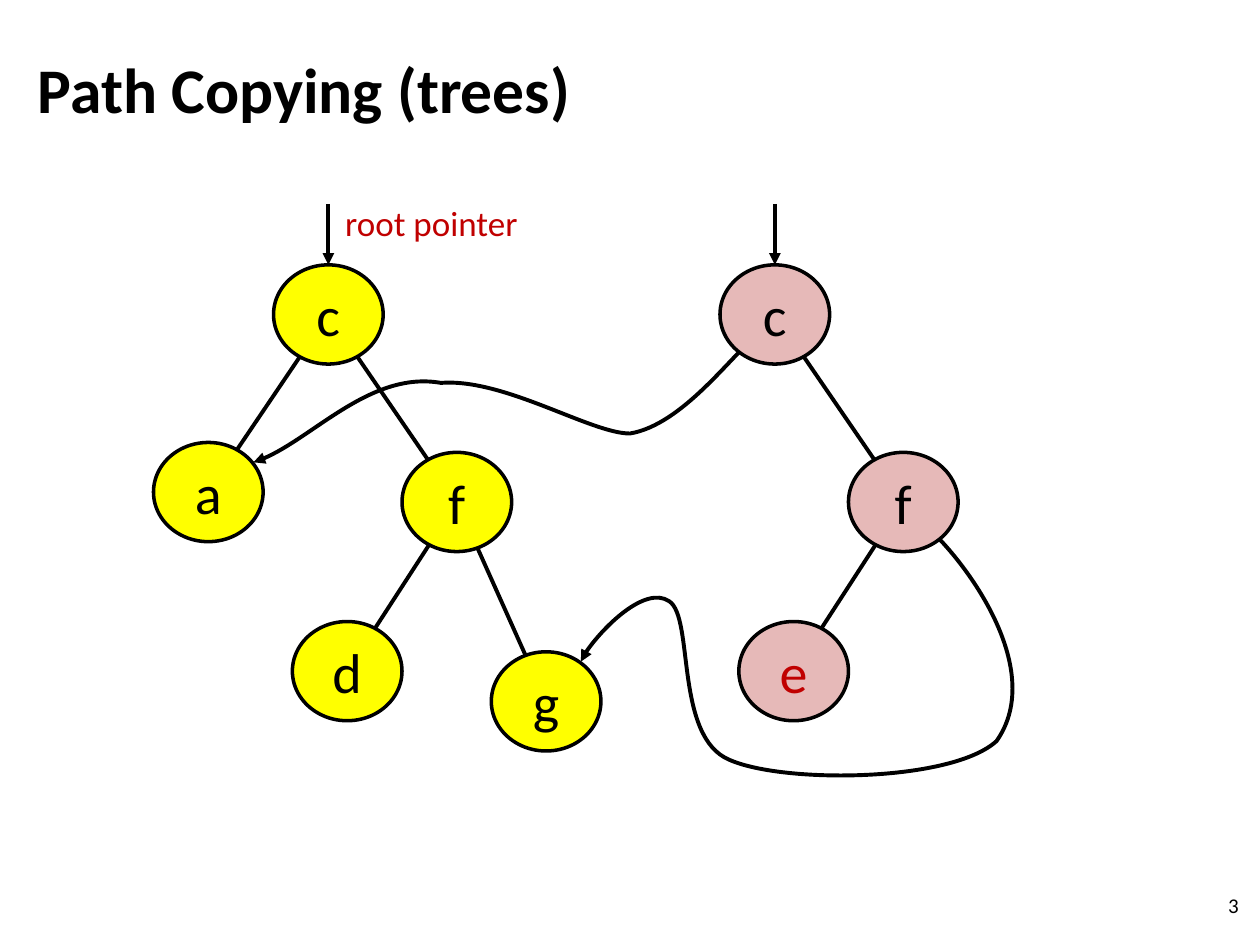
from dataclasses import dataclass
from lxml.etree import SubElement as Sub
from pptx import Presentation as Deck
from pptx.dml.color import RGBColor as Rgb
from pptx.enum.shapes import MSO_CONNECTOR as Link, MSO_SHAPE as Form
from pptx.enum.text import MSO_ANCHOR as Anchor, PP_ALIGN as Align
from pptx.oxml.ns import qn
from pptx.util import Cm, Pt

Point = tuple[float, float]


@dataclass(frozen=True)
class Theme:
    font: str = "Calibri"
    ink: Rgb = Rgb(0, 0, 0)
    red: Rgb = Rgb(0xC0, 0, 0)
    old: Rgb = Rgb(0xFF, 0xFF, 0)
    new: Rgb = Rgb(0xE6, 0xB9, 0xB8)
    title: float = 36.3
    node: float = 32
    label: float = 20
    page: float = 12
    edge: float = 2.25
    rim: float = 2


@dataclass(frozen=True)
class Node:
    name: str
    x: float
    y: float
    fill: Rgb
    ink: Rgb


@dataclass(frozen=True)
class Edge:
    top: Node
    low: Node
    cut: float = 0


@dataclass(frozen=True)
class Label:
    text: str
    x: float
    y: float
    wide: float
    high: float
    size: float
    ink: Rgb
    bold: bool = False
    align: Align = Align.LEFT
    anchor: Anchor = Anchor.MIDDLE
    space: float = 1


LOOK = Theme()
WIDE, HIGH = 2.21, 2.0
SHIFT = 9.0
ROOT_Y, F_Y, LEAF_Y = 6.34, 10.12, 13.53
ROOT_X, F_X, LEAF_X = 6.62, 9.21, 7.0
STEM = 4.11

C = Node("c", ROOT_X, ROOT_Y, LOOK.old, LOOK.ink)
A = Node("a", 4.2, 9.92, LOOK.old, LOOK.ink)
F = Node("f", F_X, F_Y, LOOK.old, LOOK.ink)
D = Node("d", LEAF_X, LEAF_Y, LOOK.old, LOOK.ink)
G = Node("g", 11.01, 14.14, LOOK.old, LOOK.ink)
C2 = Node("c", ROOT_X + SHIFT, ROOT_Y, LOOK.new, LOOK.ink)
F2 = Node("f", F_X + SHIFT, F_Y, LOOK.new, LOOK.ink)
E = Node("e", LEAF_X + SHIFT, LEAF_Y, LOOK.new, LOOK.red)

NODES = [C, A, F, D, G, C2, F2, E]
EDGES = [Edge(C2, F2, 0.22), Edge(F2, E, 0.22),
         Edge(C, A), Edge(F, G), Edge(C, F), Edge(F, D)]
CURVES: list[list[Point]] = [
    [(15.29, 6.73),
     (14.76, 7.14), (13.77, 8.56), (12.7, 8.74),
     (11.91, 8.74), (10.16, 7.62), (8.89, 7.72),
     (7.49, 7.47), (6.17, 8.99), (5.11, 9.32)],
    [(18.57, 10.52),
     (19.38, 11.18), (21.13, 13.46), (20.09, 14.94),
     (19.18, 15.77), (15.8, 15.8), (14.71, 15.32),
     (13.59, 14.86), (14.0, 12.45), (13.49, 12.12),
     (13.0, 11.79), (11.84, 12.95), (11.71, 13.34)],
]
LABELS = [
    Label("3", 19.3, 17.73, 5.92, 1.02, LOOK.page, LOOK.ink, align=Align.RIGHT),
    Label("Path Copying (trees)", 0.51, 1.12, 22.86, 1.6, LOOK.title, LOOK.ink,
          bold=True, space=0.8),
    Label("root pointer", 6.71, 3.94, 6.3, 1.12, LOOK.label, LOOK.red,
          anchor=Anchor.TOP),
]


def put_run(para, text: str, size: float, ink: Rgb, bold: bool = False) -> None:
    run = para.add_run()
    run.text = text
    run.font.name = LOOK.font
    run.font.size = Pt(size)
    run.font.bold = bold
    run.font.color.rgb = ink


def set_line(shape, width: float, arrow: bool = False) -> None:
    shape.line.color.rgb = LOOK.ink
    shape.line.width = Pt(width)
    if arrow:
        Sub(shape.line._get_or_add_ln(), qn("a:tailEnd"), type="triangle")


def draw_line(slide, start: Point, end: Point, arrow: bool = False) -> None:
    ends = [Cm(v) for v in (*start, *end)]
    line = slide.shapes.add_connector(Link.STRAIGHT, *ends)
    set_line(line, LOOK.edge, arrow)
    Sub(line._element.spPr, qn("a:effectLst"))


def draw_edge(slide, edge: Edge) -> None:
    top, low = edge.top, edge.low
    dx, dy = (low.x - top.x) * edge.cut, (low.y - top.y) * edge.cut
    draw_line(slide, (low.x - dx, low.y - dy), (top.x + dx, top.y + dy))


def draw_curve(slide, points: list[Point]) -> None:
    first, *rest = [(Cm(x), Cm(y)) for x, y in points]
    pen = slide.shapes.build_freeform(*first)
    pen.add_line_segments(rest, close=False)
    curve = pen.convert_to_shape()
    curve.shadow.inherit = False
    curve.fill.background()
    set_line(curve, LOOK.edge, True)
    steps = list(curve._element.iter(qn("a:lnTo")))
    for trio in zip(*[iter(steps)] * 3):
        bend = Sub(trio[0].getparent(), qn("a:cubicBezTo"))
        for step in trio:
            bend.append(step[0])
            step.getparent().remove(step)


def draw_node(slide, node: Node) -> None:
    box = [Cm(v) for v in (node.x - WIDE / 2, node.y - HIGH / 2, WIDE, HIGH)]
    disc = slide.shapes.add_shape(Form.OVAL, *box)
    disc.shadow.inherit = False
    disc.fill.solid()
    disc.fill.fore_color.rgb = node.fill
    set_line(disc, LOOK.rim)
    frame = disc.text_frame
    frame.word_wrap = False
    frame.vertical_anchor = Anchor.MIDDLE
    para = frame.paragraphs[0]
    para.alignment = Align.CENTER
    put_run(para, node.name, LOOK.node, node.ink)


def draw_label(slide, label: Label) -> None:
    box = [Cm(v) for v in (label.x, label.y, label.wide, label.high)]
    frame = slide.shapes.add_textbox(*box).text_frame
    frame.word_wrap = True
    frame.vertical_anchor = label.anchor
    para = frame.paragraphs[0]
    para.alignment = label.align
    para.line_spacing = label.space
    put_run(para, label.text, label.size, label.ink, label.bold)


def main() -> None:
    deck = Deck()
    deck.slide_width, deck.slide_height = Cm(25.4), Cm(19.05)
    slide = deck.slides.add_slide(deck.slide_layouts[6])
    for curve in CURVES:
        draw_curve(slide, curve)
    for edge in EDGES:
        draw_edge(slide, edge)
    for node in NODES:
        draw_node(slide, node)
    for root in (C, C2):
        draw_line(slide, (root.x, STEM), (root.x, root.y - HIGH / 2), True)
    for label in LABELS:
        draw_label(slide, label)
    deck.save("out.pptx")


if __name__ == "__main__":
    main()
